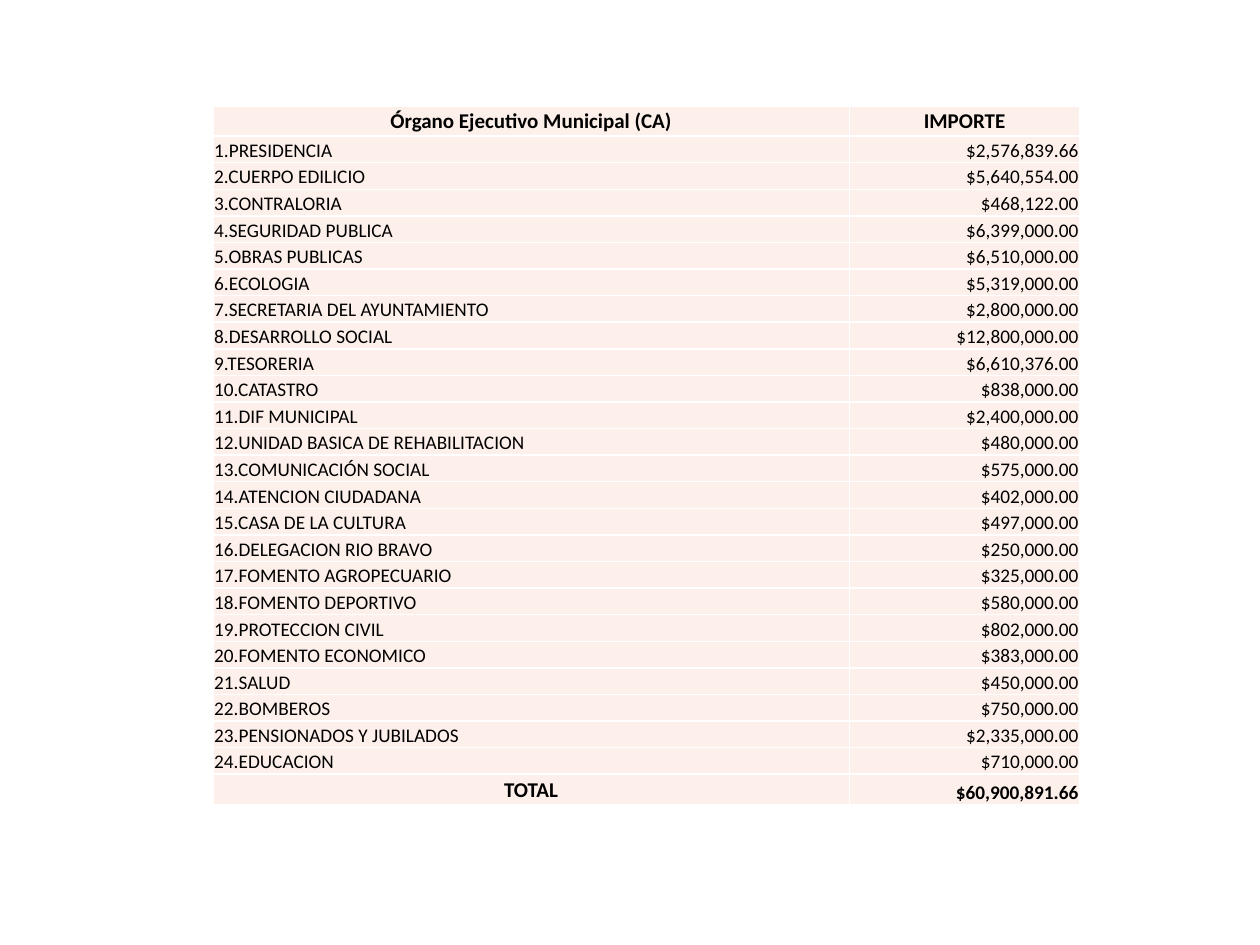
from dataclasses import dataclass
from typing import NamedTuple

from lxml.etree import SubElement
from pptx import Presentation
from pptx.dml.color import RGBColor
from pptx.enum.text import MSO_ANCHOR, PP_ALIGN
from pptx.oxml.ns import qn
from pptx.util import Inches, Pt


@dataclass(frozen=True)
class Theme:
    font: str = "Calibri"
    ink: str = "000000"
    band: str = "FDEFE9"
    rule: str = "FFFFFF"
    rule_width: float = 1
    heading_size: float = 12
    body_size: float = 11


class Department(NamedTuple):
    name: str
    budget: float


@dataclass(frozen=True)
class CellStyle:
    align: PP_ALIGN
    anchor: MSO_ANCHOR
    size: float
    bold: bool


THEME = Theme()
HEADING = CellStyle(PP_ALIGN.CENTER, MSO_ANCHOR.MIDDLE, THEME.heading_size, True)
NAME = CellStyle(PP_ALIGN.LEFT, MSO_ANCHOR.BOTTOM, THEME.body_size, False)
AMOUNT = CellStyle(PP_ALIGN.RIGHT, MSO_ANCHOR.BOTTOM, THEME.body_size, False)
TOTAL_AMOUNT = CellStyle(PP_ALIGN.RIGHT, MSO_ANCHOR.BOTTOM, THEME.body_size, True)

DEPARTMENTS = [
    Department("PRESIDENCIA", 2576839.66),
    Department("CUERPO EDILICIO", 5640554),
    Department("CONTRALORIA", 468122),
    Department("SEGURIDAD PUBLICA", 6399000),
    Department("OBRAS PUBLICAS", 6510000),
    Department("ECOLOGIA", 5319000),
    Department("SECRETARIA DEL AYUNTAMIENTO", 2800000),
    Department("DESARROLLO SOCIAL", 12800000),
    Department("TESORERIA", 6610376),
    Department("CATASTRO", 838000),
    Department("DIF MUNICIPAL", 2400000),
    Department("UNIDAD BASICA DE REHABILITACION", 480000),
    Department("COMUNICACIÓN SOCIAL", 575000),
    Department("ATENCION CIUDADANA", 402000),
    Department("CASA DE LA CULTURA", 497000),
    Department("DELEGACION RIO BRAVO", 250000),
    Department("FOMENTO AGROPECUARIO", 325000),
    Department("FOMENTO DEPORTIVO", 580000),
    Department("PROTECCION CIVIL", 802000),
    Department("FOMENTO ECONOMICO", 383000),
    Department("SALUD", 450000),
    Department("BOMBEROS", 750000),
    Department("PENSIONADOS Y JUBILADOS", 2335000),
    Department("EDUCACION", 710000),
]

COLUMN_WIDTHS = (5.05, 1.83)
TABLE_HEIGHT = 5.55
HEADING_HEIGHT = 0.24


def pesos(amount: float) -> str:
    return f"${amount:,.2f}"


def apply(target, values: dict) -> None:
    for attribute, value in values.items():
        setattr(target, attribute, value)


def draw_borders(cell) -> None:
    properties = cell._tc.get_or_add_tcPr()
    for position, side in enumerate(("a:lnL", "a:lnR", "a:lnT", "a:lnB")):
        border = properties.makeelement(qn(side), {"w": str(Pt(THEME.rule_width))})
        fill = SubElement(border, qn("a:solidFill"))
        SubElement(fill, qn("a:srgbClr"), val=THEME.rule)
        properties.insert(position, border)


def fill_cell(cell, text: str, style: CellStyle) -> None:
    cell.text = text
    apply(cell, {
        "vertical_anchor": style.anchor,
        "margin_left": Inches(0.01),
        "margin_top": Inches(0.01),
        "margin_right": Inches(0.01),
        "margin_bottom": 0,
    })
    cell.fill.solid()
    cell.fill.fore_color.rgb = RGBColor.from_string(THEME.band)
    paragraph = cell.text_frame.paragraphs[0]
    paragraph.alignment = style.align
    font = paragraph.runs[0].font
    apply(font, {"name": THEME.font, "size": Pt(style.size), "bold": style.bold})
    font.color.rgb = RGBColor.from_string(THEME.ink)
    draw_borders(cell)


def draw_budget(slide) -> None:
    total = sum(department.budget for department in DEPARTMENTS)
    lines = [
        (("Órgano Ejecutivo Municipal (CA)", HEADING), ("IMPORTE", HEADING)),
        *(
            ((f"{number}.{department.name}", NAME), (pesos(department.budget), AMOUNT))
            for number, department in enumerate(DEPARTMENTS, 1)
        ),
        (("TOTAL", HEADING), (pesos(total), TOTAL_AMOUNT)),
    ]
    budget = slide.shapes.add_table(
        len(lines), len(COLUMN_WIDTHS), Inches(1.69), Inches(0.84),
        Inches(sum(COLUMN_WIDTHS)), Inches(TABLE_HEIGHT),
    ).table
    apply(budget, {"first_row": False, "horz_banding": False})
    for column, width in zip(budget.columns, COLUMN_WIDTHS):
        column.width = Inches(width)
    department_height = (TABLE_HEIGHT - 2 * HEADING_HEIGHT) / len(DEPARTMENTS)
    for row, line in zip(budget.rows, lines):
        is_heading = line[0][1] is HEADING
        row.height = Inches(HEADING_HEIGHT if is_heading else department_height)
        for cell, (text, style) in zip(row.cells, line):
            fill_cell(cell, text, style)


def main() -> None:
    presentation = Presentation()
    apply(presentation, {"slide_width": Inches(10), "slide_height": Inches(7.5)})
    draw_budget(presentation.slides.add_slide(presentation.slide_layouts[6]))
    presentation.save("out.pptx")


if __name__ == "__main__":
    main()
